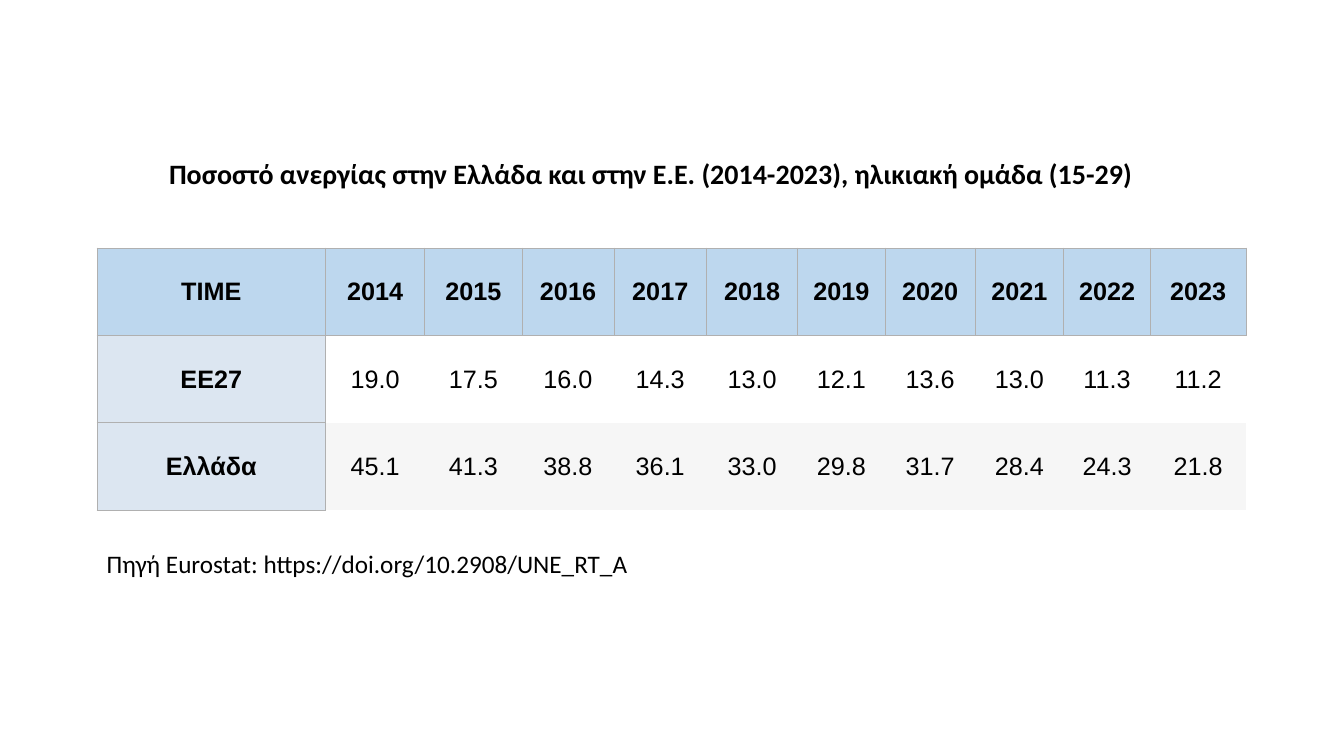
from lxml.etree import SubElement
from pptx import Presentation
from pptx.dml.color import RGBColor
from pptx.enum.text import MSO_ANCHOR, MSO_AUTO_SIZE, PP_ALIGN
from pptx.oxml.ns import qn
from pptx.util import Cm, Pt

BLACK = RGBColor(0x00, 0x00, 0x00)
HEADER_BLUE = RGBColor(0xBD, 0xD7, 0xEE)
LABEL_BLUE = RGBColor(0xDC, 0xE6, 0xF1)
BAND_GREY = RGBColor(0xF6, 0xF6, 0xF6)
BORDER_GREY = RGBColor(0xB0, 0xB0, 0xB0)

TITLE = "Ποσοστό ανεργίας στην Ελλάδα και στην Ε.Ε. (2014-2023), ηλικιακή ομάδα (15-29)"
SOURCE = "Πηγή Eurostat: https://doi.org/10.2908/UNE_RT_A"
ROWS = [
    ["TIME", *map(str, range(2014, 2024))],
    ["EΕ27", "19.0", "17.5", "16.0", "14.3", "13.0", "12.1", "13.6", "13.0", "11.3", "11.2"],
    ["Ελλάδα", "45.1", "41.3", "38.8", "36.1", "33.0", "29.8", "31.7", "28.4", "24.3", "21.8"],
]
COL_WIDTHS = [5.77, 2.49, 2.46, 2.31, 2.34, 2.29, 2.21, 2.26, 2.24, 2.18, 2.41]
ROW_HEIGHT = 2.2

TITLE_FONT = {"name": "Calibri", "size": Pt(20), "bold": True}
SOURCE_FONT = {"name": "Calibri", "size": Pt(18), "bold": False}
LABEL_FONT = {"name": "Arial", "size": Pt(18), "bold": True}
VALUE_FONT = {"name": "Arial", "size": Pt(18), "bold": False}
CELL_FORMAT = {
    "margin_left": Cm(0.02),
    "margin_right": Cm(0.02),
    "margin_top": Cm(0.02),
    "margin_bottom": 0,
    "vertical_anchor": MSO_ANCHOR.MIDDLE,
}


def set_attrs(obj, values):
    for name, value in values.items():
        setattr(obj, name, value)


def write_text(tf, text, font, align):
    p = tf.paragraphs[0]
    p.alignment = align
    r = p.add_run()
    r.text = text
    set_attrs(r.font, font)
    r.font.color.rgb = BLACK


def format_text_box(sp, box, text, font, align):
    left, top, width, height = map(Cm, box)
    set_attrs(sp, {"left": left, "top": top, "width": width, "height": height})
    tf = sp.text_frame
    set_attrs(tf, {
        "word_wrap": False,
        "auto_size": MSO_AUTO_SIZE.SHAPE_TO_FIT_TEXT,
        "vertical_anchor": MSO_ANCHOR.TOP,
    })
    write_text(tf, text, font, align)


def set_borders(cell, sides):
    """Draw grey borders on the given sides (L, R, T, B) and none on the others."""
    tc_pr = cell._tc.get_or_add_tcPr()
    for side in "LRTB":
        ln = SubElement(tc_pr, qn(f"a:ln{side}"), w=str(Pt(0.5)))
        if side in sides:
            fill = SubElement(ln, qn("a:solidFill"))
            SubElement(fill, qn("a:srgbClr"), val=str(BORDER_GREY))
        else:
            SubElement(ln, qn("a:noFill"))


def cell_style(row, col):
    if row == 0:
        return LABEL_FONT, HEADER_BLUE, "LRTB"
    if col == 0:
        return LABEL_FONT, LABEL_BLUE, "LRTB"
    sides = ("L" if col == 1 else "") + ("T" if row == 1 else "")
    return VALUE_FONT, BAND_GREY if row == 2 else None, sides


def format_cell(cell, text, font, color, sides):
    set_attrs(cell, CELL_FORMAT)
    set_borders(cell, sides)
    if color is None:
        cell.fill.background()
    else:
        cell.fill.solid()
        cell.fill.fore_color.rgb = color
    write_text(cell.text_frame, text, font, PP_ALIGN.CENTER)


def add_rate_table(s, left, top):
    frame = s.shapes.add_table(
        len(ROWS), len(COL_WIDTHS), Cm(left), Cm(top),
        Cm(sum(COL_WIDTHS)), Cm(ROW_HEIGHT * len(ROWS)),
    )
    table = frame.table
    set_attrs(table, {"first_row": False, "horz_banding": False})
    for column, width in zip(table.columns, COL_WIDTHS):
        column.width = Cm(width)
    for i, values in enumerate(ROWS):
        table.rows[i].height = Cm(ROW_HEIGHT)
        for j, text in enumerate(values):
            format_cell(table.cell(i, j), text, *cell_style(i, j))


def main():
    prs = Presentation()
    set_attrs(prs, {"slide_width": Cm(33.87), "slide_height": Cm(19.05)})
    s = prs.slides.add_slide(prs.slide_layouts[5])
    add_rate_table(s, 2.44, 6.25)
    format_text_box(s.shapes.title, (3.91, 3.81, 24.99, 1.12), TITLE, TITLE_FONT, PP_ALIGN.CENTER)
    source = s.shapes.add_textbox(0, 0, 0, 0)
    format_text_box(source, (2.44, 13.69, 13.79, 1.02), SOURCE, SOURCE_FONT, PP_ALIGN.LEFT)
    prs.save("out.pptx")


if __name__ == "__main__":
    main()
